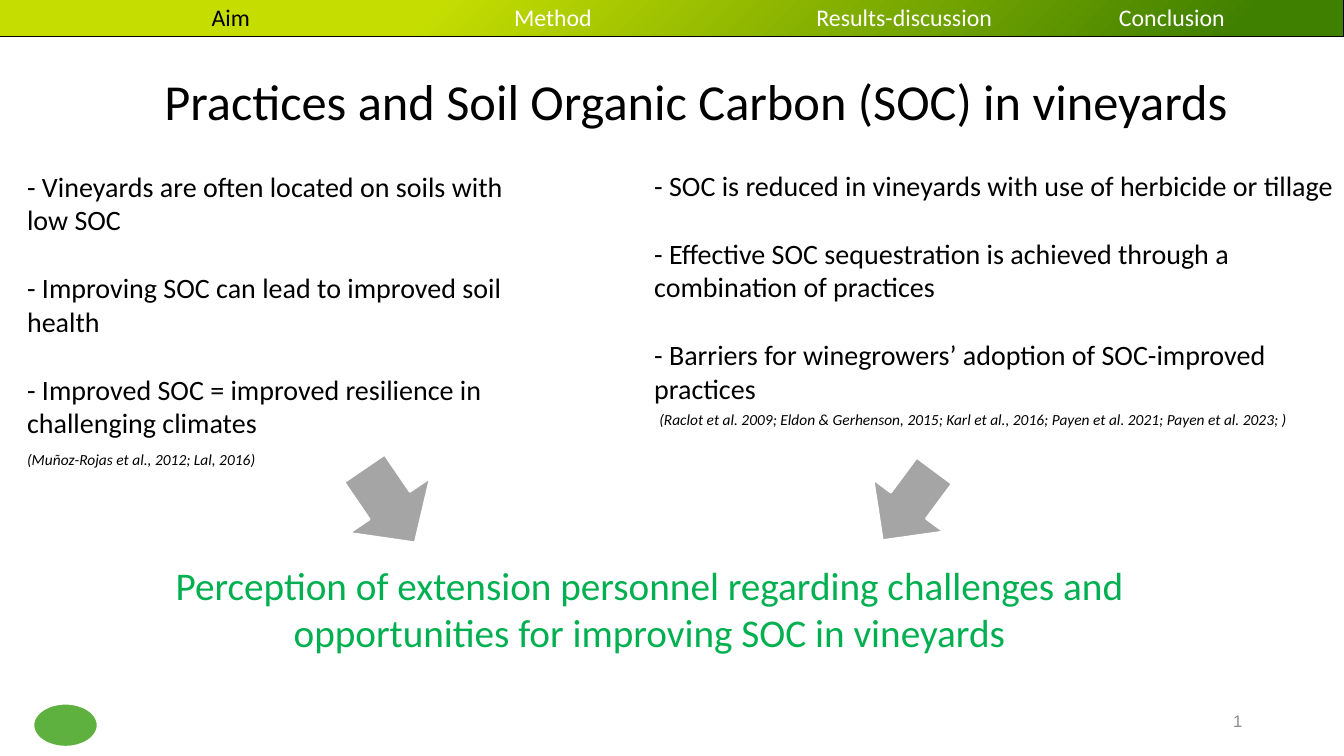
"""Builds the slide on practices and soil organic carbon in vineyards."""
from lxml.etree import SubElement as add_element
from pptx import Presentation
from pptx.dml.color import RGBColor
from pptx.enum.shapes import MSO_SHAPE as Preset
from pptx.enum.text import MSO_ANCHOR as Anchor, PP_ALIGN as Align
from pptx.oxml import parse_xml
from pptx.oxml.ns import nsdecls, qn
from pptx.util import Inches, Pt

TITLE = "Practices and Soil Organic Carbon (SOC) in vineyards"
SECTIONS = ["Aim", "Method", "Results-discussion", "Conclusion"]
VINEYARD_POINTS = [
    "- Vineyards are often located on soils with low SOC",
    "- Improving SOC can lead to improved soil health",
    "- Improved SOC = improved resilience in challenging climates",
]
PRACTICE_POINTS = [
    "- SOC is reduced in vineyards with use of herbicide or tillage",
    "- Effective SOC sequestration is achieved through a combination of practices",
    "- Barriers for winegrowers’ adoption of SOC-improved practices",
]
VINEYARD_SOURCES = "(Muñoz-Rojas et al., 2012; Lal, 2016)"
PRACTICE_SOURCES = (
    "(Raclot et al. 2009; Eldon & Gerhenson, 2015; Karl et al., 2016; "
    "Payen et al. 2021; Payen et al. 2023; )"
)
QUESTION = (
    "Perception of extension personnel regarding challenges and "
    "opportunities for improving SOC in vineyards"
)
ARROWS = [((3.42, 4.53, 0.89, 0.97), 55.7), ((8.58, 4.58, 0.86, 0.87), 126.6)]
FIRST_TAB, TAB_STEP = 2, 3

THEME = {
    "black": "000000", "white": "FFFFFF", "green": "00B050", "grey": "8C8C8C",
    "arrow": "A5A5A5", "leaf": "5FB13F",
    "bar": [(0.08, "408000"), (0.68, "C5DD01")],
    "title": {"size": Pt(36), "name": "Calibri"},
    "section": {"size": Pt(17), "name": "Calibri"},
    "point": {"size": Pt(20), "name": "Calibri"},
    "source": {"size": Pt(11), "name": "Calibri", "italic": True},
    "question": {"size": Pt(28), "name": "Calibri"},
    "number": {"size": Pt(12), "name": "Arial"},
    "point_gap": Pt(24.4),
}


def place(box, left, top, width, height):
    spots = {"left": left, "top": top, "width": width, "height": height}
    for name, value in spots.items():
        setattr(box, name, Inches(value))


def style(span, font, color):
    for name, value in THEME[font].items():
        setattr(span.font, name, value)
    span.font.color.rgb = RGBColor.from_string(THEME[color])


def write(box, lines, font, color="black", align=Align.LEFT, anchor=Anchor.TOP, gap=0):
    frame = box.text_frame
    frame.word_wrap = True
    frame.vertical_anchor = anchor
    for index, line in enumerate(lines):
        para = frame.add_paragraph() if index else frame.paragraphs[0]
        para.alignment = align
        para.space_before = gap if index else 0
        span = para.add_run()
        span.text = line
        style(span, font, color)


def add_text(page, spot, lines, font, **options):
    box = page.shapes.add_textbox(*map(Inches, spot))
    write(box, lines, font, **options)


def add_preset(page, kind, spot, color):
    shape = page.shapes.add_shape(kind, *map(Inches, spot))
    shape.shadow.inherit = False
    shape.fill.solid()
    shape.fill.fore_color.rgb = RGBColor.from_string(THEME[color])
    shape.line.color.rgb = RGBColor.from_string(THEME["white"])
    shape.line.width = Pt(1.5)
    return shape


def add_section_bar(page):
    bar = add_preset(page, Preset.RECTANGLE, (0, -0.03, 13.33, 0.39), "white")
    bar.line.color.rgb = RGBColor.from_string(THEME["black"])
    bar.line.width = Pt(0.75)
    bar.fill.gradient()
    for stop, (position, color) in zip(bar.fill.gradient_stops, THEME["bar"]):
        stop.position = position
        stop.color.rgb = RGBColor.from_string(color)
    gradient = bar.element.spPr.find(qn("a:gradFill"))
    gradient.replace(gradient.find(qn("a:lin")), parse_xml(
        f'<a:path {nsdecls("a")} path="circle">'
        '<a:fillToRect l="100000" t="100000"/></a:path>'))

    bar.text_frame.vertical_anchor = Anchor.MIDDLE
    para = bar.text_frame.paragraphs[0]
    para.alignment = Align.LEFT
    tabs = add_element(para._p.get_or_add_pPr(), qn("a:tabLst"))
    for index, section in enumerate(SECTIONS):
        position = Inches(FIRST_TAB + index * TAB_STEP)
        add_element(tabs, qn("a:tab"), pos=str(position), algn="l")
        span = para.add_run()
        span.text = f"\t{section}"
        style(span, "section", "white" if index else "black")


def main():
    deck = Presentation()
    deck.slide_width, deck.slide_height = Inches(13.33), Inches(7.5)
    page = deck.slides.add_slide(deck.slide_layouts[5])

    add_preset(page, Preset.OVAL, (0.33, 6.98, 0.64, 0.43), "leaf")
    add_section_bar(page)
    place(page.shapes.title, 1.53, 0.64, 10.85, 0.71)
    write(page.shapes.title, [TITLE], "title", anchor=Anchor.MIDDLE)

    gap = THEME["point_gap"]
    add_text(page, (0.17, 1.63, 5.22, 2.79), VINEYARD_POINTS, "point", gap=gap)
    add_text(page, (6.39, 1.62, 6.94, 2.46), PRACTICE_POINTS, "point", gap=gap)
    add_text(page, (0.17, 4.42, 2.52, 0.29), [VINEYARD_SOURCES], "source")
    add_text(page, (6.44, 4.02, 6.49, 0.29), [PRACTICE_SOURCES], "source")

    for spot, angle in ARROWS:
        add_preset(page, Preset.RIGHT_ARROW, spot, "arrow").rotation = angle

    add_text(page, (0.78, 5.52, 11.32, 1.04), [QUESTION], "question",
             color="green", align=Align.CENTER)
    add_text(page, (9.42, 6.95, 3, 0.4), ["1"], "number",
             color="grey", align=Align.RIGHT, anchor=Anchor.MIDDLE)
    deck.save("out.pptx")


if __name__ == "__main__":
    main()
